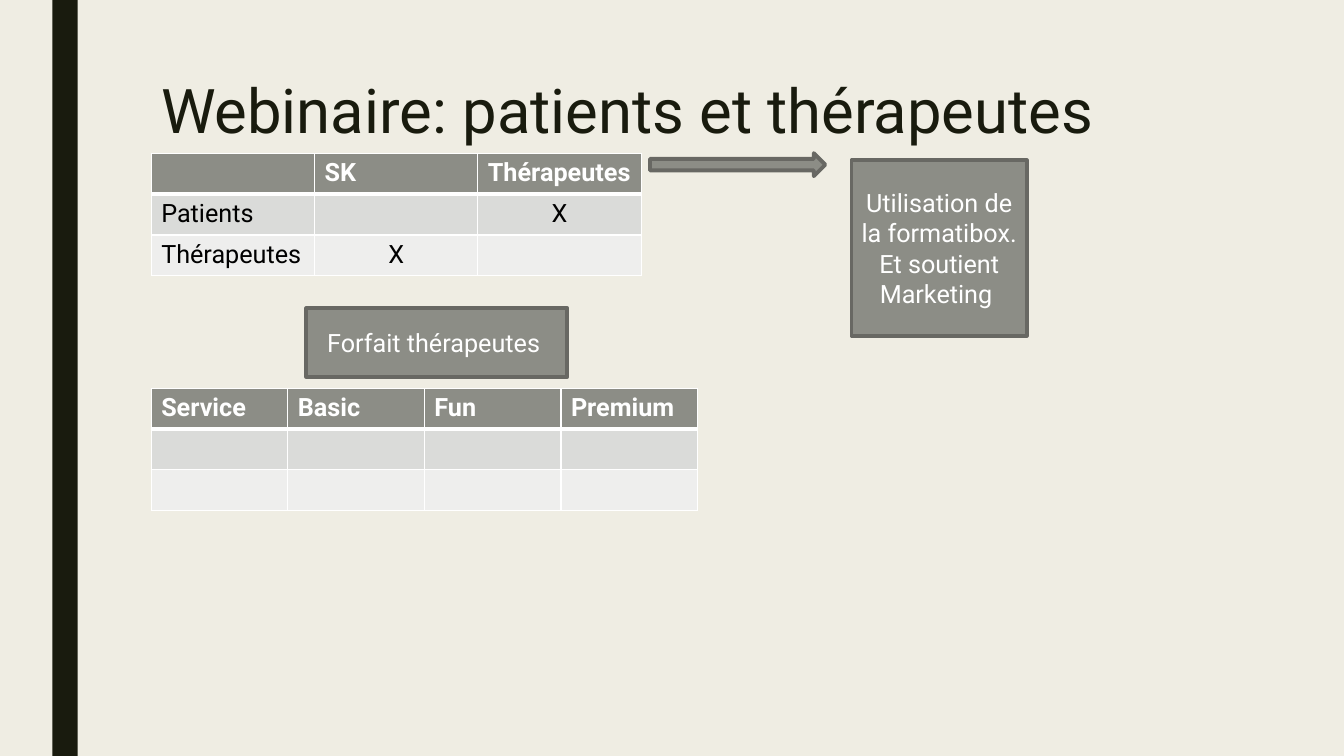
from lxml import etree
from pptx import Presentation
from pptx import util as u
from pptx.dml.color import RGBColor
from pptx.enum import shapes, text
from pptx.oxml.ns import qn

THEME = {
    "font": "Roboto",
    "title_size": 44,
    "body_size": 18,
    "background": "EFEDE3",
    "dark": "191B0E",
    "accent": "8C8D86",
    "outline": "686863",
    "outline_width": 2.75,
    "light": "FFFFFF",
    "cell_text": "000000",
    "bands": ("DADBD9", "EEEEED"),
}

TITLE = {"lines": ["Webinaire: patients et thérapeutes"], "box": (3.81, 1.91, 26.04, 2.26)}
SIDE_BAR = (1.32, 0, 0.64, 19.05)
TABLES = [
    {
        "rows": [["", "SK", "Thérapeutes"], ["Patients", "", "X"], ["Thérapeutes", "X", ""]],
        "box": (3.81, 3.86, 12.35, 3.09),
    },
    {
        "rows": [["Service", "Basic", "Fun", "Premium"], [""] * 4, [""] * 4],
        "box": (3.81, 9.78, 13.77, 3.09),
    },
]
ARROW = (16.38, 3.86, 4.42, 0.58)
CARDS = [
    {"lines": ["Utilisation de la formatibox.", "Et soutient Marketing "], "box": (21.46, 4.04, 4.42, 4.42)},
    {"lines": ["Forfait thérapeutes "], "box": (7.72, 7.77, 6.58, 1.73)},
]


def lengths(box):
    return [u.Cm(value) for value in box]


def colour(name):
    return RGBColor.from_string(THEME.get(name, name))


def set_attributes(target, values):
    for name, value in values.items():
        setattr(target, name, value)


def write(frame, lines, size, ink, bold=False, align=None, spacing=None):
    frame.word_wrap = True
    for index, line in enumerate(lines):
        paragraph = frame.paragraphs[0] if index == 0 else frame.add_paragraph()
        set_attributes(paragraph, {"alignment": align, "line_spacing": spacing})
        run = paragraph.add_run()
        run.text = line
        set_attributes(run.font, {"name": THEME["font"], "size": u.Pt(THEME[size]), "bold": bold})
        run.font.color.rgb = colour(ink)


def add_block(slide, kind, box, fill, outlined=True):
    shape = slide.shapes.add_shape(kind, *lengths(box))
    shape.shadow.inherit = False
    shape.fill.solid()
    shape.fill.fore_color.rgb = colour(fill)
    if outlined:
        shape.line.color.rgb = colour("outline")
        shape.line.width = u.Pt(THEME["outline_width"])
    else:
        shape.line.fill.background()
    return shape


def set_borders(cell, widths):
    properties = cell._tc.get_or_add_tcPr()
    for index, (side, width) in enumerate(widths.items()):
        line = etree.Element(qn(f"a:ln{side}"), w=str(u.Pt(width)))
        fill = etree.SubElement(line, qn("a:solidFill"))
        etree.SubElement(fill, qn("a:srgbClr"), val=THEME["light"])
        properties.insert(index, line)


def add_grid(slide, rows, box):
    row_count, column_count = len(rows), len(rows[0])
    table = slide.shapes.add_table(row_count, column_count, *lengths(box)).table
    for column in table.columns:
        column.width = u.Cm(box[2] / column_count)
    for row_index, row in enumerate(rows):
        header = row_index == 0
        table.rows[row_index].height = u.Cm(box[3] / row_count)
        for column_index, label in enumerate(row):
            cell = table.cell(row_index, column_index)
            cell.fill.solid()
            cell.fill.fore_color.rgb = colour("accent" if header else THEME["bands"][(row_index - 1) % 2])
            set_borders(cell, {"L": 1, "R": 1, "T": 3 if row_index == 1 else 1, "B": 3 if header else 1})
            if label:
                align = text.PP_ALIGN.CENTER if label == "X" else None
                write(cell.text_frame, [label], "body_size", "light" if header else "cell_text", header, align)


def main():
    presentation = Presentation()
    set_attributes(presentation, {"slide_width": u.Cm(33.87), "slide_height": u.Cm(19.05)})
    slide = presentation.slides.add_slide(presentation.slide_layouts[6])
    slide.background.fill.solid()
    slide.background.fill.fore_color.rgb = colour("background")

    add_block(slide, shapes.MSO_SHAPE.RECTANGLE, SIDE_BAR, "dark", outlined=False)
    title = slide.shapes.add_textbox(*lengths(TITLE["box"]))
    write(title.text_frame, TITLE["lines"], "title_size", "dark", spacing=0.89)

    for grid in TABLES:
        add_grid(slide, grid["rows"], grid["box"])

    add_block(slide, shapes.MSO_SHAPE.RIGHT_ARROW, ARROW, "accent")
    for card in CARDS:
        shape = add_block(slide, shapes.MSO_SHAPE.RECTANGLE, card["box"], "accent")
        shape.text_frame.vertical_anchor = text.MSO_ANCHOR.MIDDLE
        write(shape.text_frame, card["lines"], "body_size", "light", align=text.PP_ALIGN.CENTER)

    presentation.save("out.pptx")


if __name__ == "__main__":
    main()
